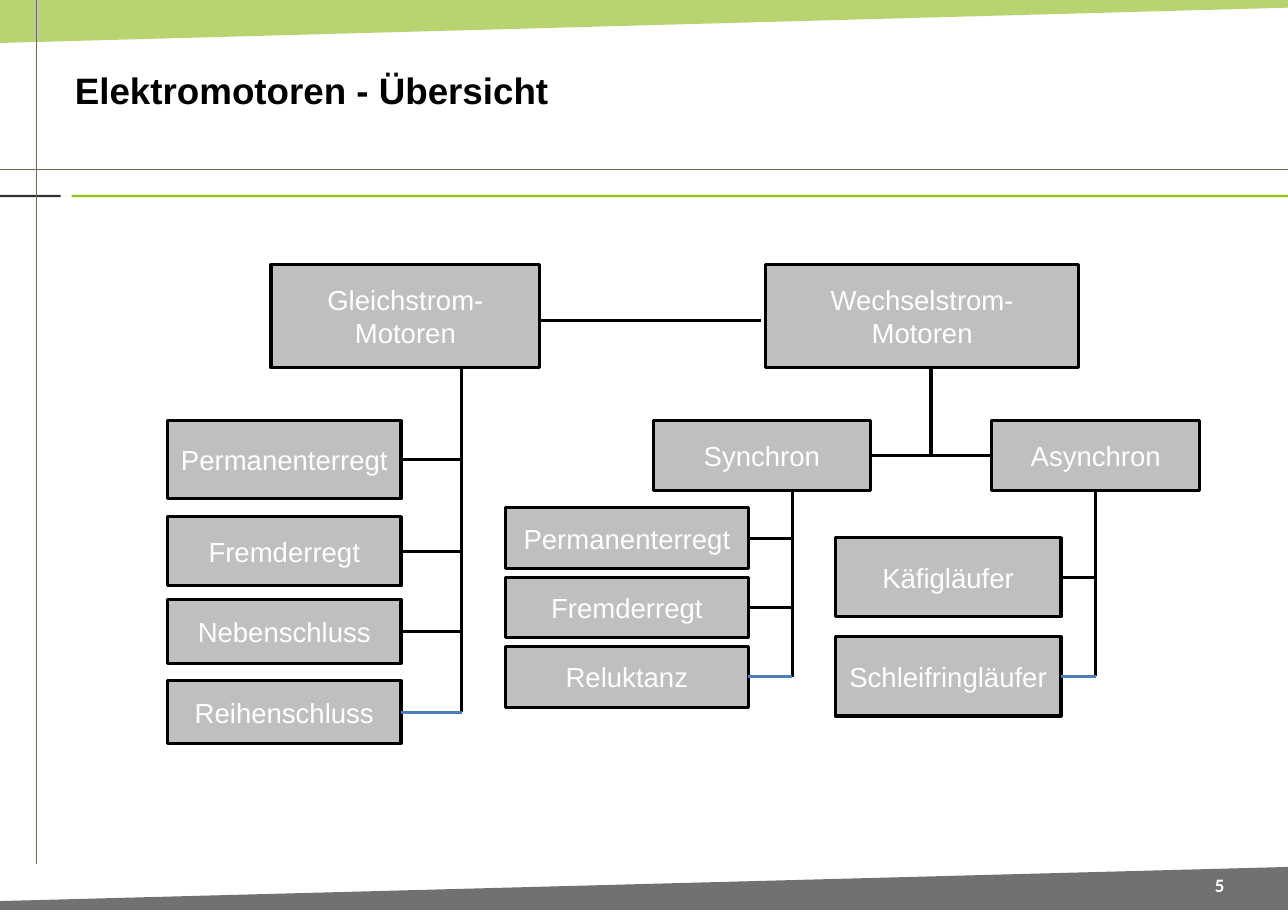
"""Build the overview slide of electric motor types."""
from lxml import etree
from pptx import Presentation
from pptx import util as u
from pptx.dml.color import RGBColor
from pptx.enum import shapes, text
from pptx.oxml.ns import qn

WHITE = RGBColor(0xFF, 0xFF, 0xFF)
BLACK = RGBColor(0, 0, 0)
GREY = RGBColor(0xBF, 0xBF, 0xBF)
BLUE = RGBColor(0x4B, 0x7E, 0xBC)
BROWN = RGBColor(0x71, 0x68, 0x5A)
DARK = RGBColor(0x31, 0x31, 0x30)
LIME = RGBColor(0x94, 0xC6, 0x00)
GREEN = RGBColor(0x95, 0xC0, 0x2A)
SLATE = RGBColor(0x70, 0x71, 0x73)

WIDTH, HEIGHT = 841.68, 595.44
TITLE = "Elektromotoren - Übersicht"
PAGE_NUMBER = "5"
BARS = [
    ((0, 107.28, WIDTH, 28.08), WHITE),
    ((0, 127.44, 39.6, 1.44), DARK),
    ((46.8, 127.44, WIDTH - 46.8, 1.44), LIME),
]
WEDGES = [
    ([(0, 0), (WIDTH, 0), (WIDTH, 5.04), (0, 28.08)], GREEN, 67),
    ([(0, 594.72), (0, 588.96), (WIDTH, 566.64), (WIDTH, 594.72)], SLATE, 100),
]
GUIDES = [((WIDTH, 110.88), (0, 110.88)), ((23.76, 564.48), (23.76, 0))]
PARENTS = {
    "Gleichstrom-\nMotoren": (177.12, 172.8, 175.68, 67.7),
    "Wechselstrom-\nMotoren": (500.4, 172.8, 204.48, 67.7),
    "Synchron": (426.96, 275.04, 141.84, 45.36),
    "Asynchron": (648, 275.04, 136.08, 45.36),
}
FAMILIES = [
    {"parent": "Gleichstrom-\nMotoren", "left": 109.44, "width": 152.64, "spine": 301.68,
     "kinds": [("Permanenterregt", 275.04, 51.12), ("Fremderregt", 337.68, 45.36),
               ("Nebenschluss", 391.68, 41.76), ("Reihenschluss", 444.96, 41.04)]},
    {"parent": "Synchron", "left": 330.48, "width": 158.4, "spine": 517.68,
     "kinds": [(name, 331.92 + 45.36 * row, 39.6)
               for row, name in enumerate(["Permanenterregt", "Fremderregt", "Reluktanz"])]},
    {"parent": "Asynchron", "left": 545.76, "width": 147.6, "spine": 716.04,
     "kinds": [(name, 351.36 + 64.8 * row, 51.84)
               for row, name in enumerate(["Käfigläufer", "Schleifringläufer"])]},
]


def write(shape, words, size=18, font="Arial", color=WHITE, bold=False,
          align=text.PP_ALIGN.CENTER, inset=(7.2, 3.6)):
    frame = shape.text_frame
    frame.word_wrap = True
    frame.vertical_anchor = text.MSO_ANCHOR.MIDDLE
    frame.margin_left = frame.margin_right = u.Pt(inset[0])
    frame.margin_top = frame.margin_bottom = u.Pt(inset[1])
    frame.text = words
    for para in frame.paragraphs:
        para.alignment = align
        para.font.size, para.font.name, para.font.bold = u.Pt(size), font, bold
        para.font.color.rgb = color


def paint(shape, fill, line=None):
    shape.shadow.inherit = False
    shape.fill.solid()
    shape.fill.fore_color.rgb = fill
    if line is None:
        shape.line.fill.background()
    else:
        shape.line.color.rgb = line
        shape.line.width = u.Pt(2)


def add_box(page, place, fill, line=None):
    box = page.shapes.add_shape(shapes.MSO_SHAPE.RECTANGLE, *map(u.Pt, place))
    paint(box, fill, line)
    return box


def add_motor(page, name, place):
    box = add_box(page, place, GREY, BLACK)
    write(box, name)
    return box


def add_line(page, start, end, color=BLACK, width=2):
    line = page.shapes.add_connector(shapes.MSO_CONNECTOR.STRAIGHT, *map(u.Pt, start + end))
    line.line.color.rgb = color
    line.line.width = u.Pt(width)
    etree.SubElement(line._element.spPr, qn("a:effectLst"))
    return line


def add_wedge(page, points, fill, opacity):
    builder = page.shapes.build_freeform(u.Pt(points[0][0]), u.Pt(points[0][1]))
    builder.add_line_segments([(u.Pt(x), u.Pt(y)) for x, y in points[1:]], close=True)
    wedge = builder.convert_to_shape()
    paint(wedge, fill)
    if opacity < 100:
        shade = wedge._element.spPr.find(qn("a:solidFill"))[0]
        etree.SubElement(shade, qn("a:alpha"), val=str(opacity * 1000))


def add_family(page, family, parent):
    left, width, spine = family["left"], family["width"], family["spine"]
    last = len(family["kinds"]) - 1
    for row, (name, top, height) in enumerate(family["kinds"]):
        box = add_motor(page, name, (left, top, width, height))
        middle = top + height / 2
        if row == last:
            bottom = PARENTS[family["parent"]][1] + PARENTS[family["parent"]][3]
            trunk = add_line(page, (spine, bottom), (spine, middle))
            if family["parent"] == "Asynchron":
                trunk.begin_connect(parent, 2)
        branch = add_line(page, (left + width, middle), (spine, middle),
                          BLUE if row == last else BLACK)
        branch.begin_connect(box, 3)


def main():
    deck = Presentation()
    deck.slide_width, deck.slide_height = u.Pt(WIDTH), u.Pt(HEIGHT)
    page = deck.slides.add_slide(deck.slide_layouts[6])
    for wedge in WEDGES:
        add_wedge(page, *wedge)
    for place, color in BARS:
        add_box(page, place, color)
    for start, end in GUIDES:
        add_line(page, start, end, BROWN, 0.75)

    number = page.shapes.add_textbox(*map(u.Pt, (772.56, 568.08, 48.96, 20.88)))
    write(number, PAGE_NUMBER, size=12.4, font="Calibri", bold=True, inset=(7.92, 4.32))
    title = page.shapes.add_textbox(*map(u.Pt, (41.04, 25.2, 527.04, 66.96)))
    write(title, TITLE, size=24, color=BLACK, bold=True,
          align=text.PP_ALIGN.LEFT, inset=(7.92, 4.32))

    parents = {name: add_motor(page, name, place) for name, place in PARENTS.items()}
    add_line(page, (352.8, 209.52), (497.52, 209.52))
    bridge = add_line(page, (568.8, 297.72), (648, 297.72))
    bridge.begin_connect(parents["Synchron"], 3)
    bridge.end_connect(parents["Asynchron"], 1)
    add_line(page, (608.4, 297.72), (608.4, 240.5))
    for family in FAMILIES:
        add_family(page, family, parents[family["parent"]])
    deck.save("out.pptx")


if __name__ == "__main__":
    main()
